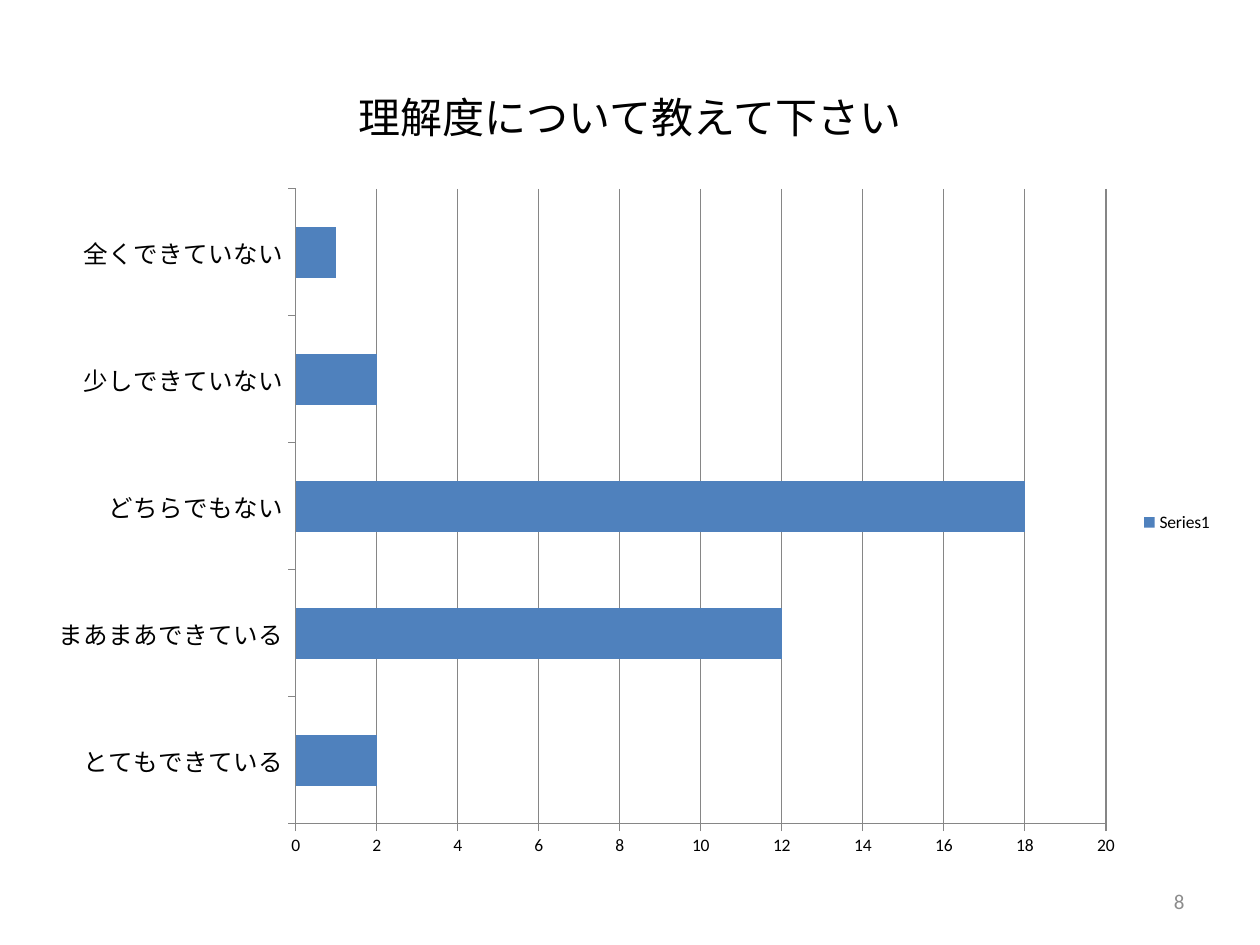
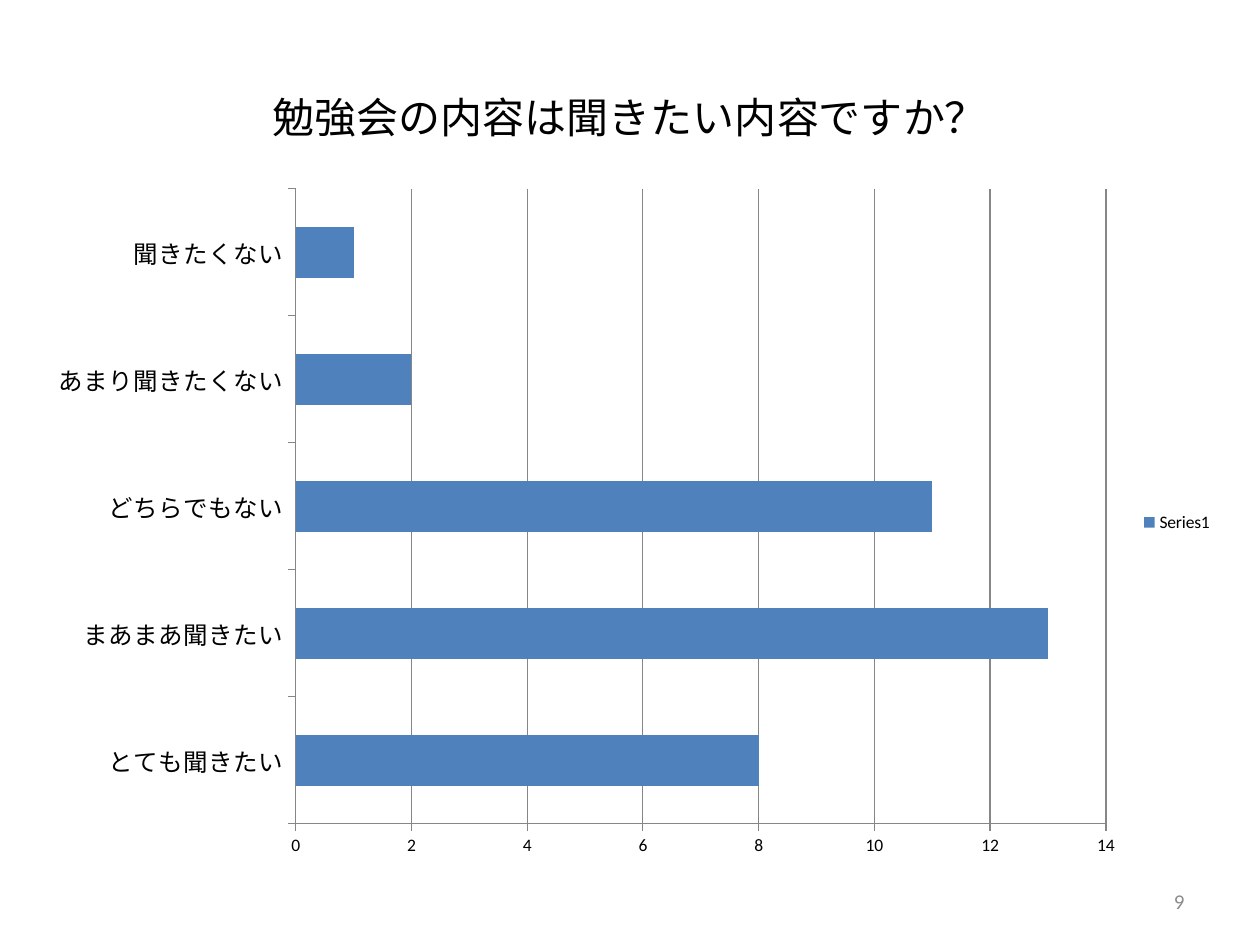
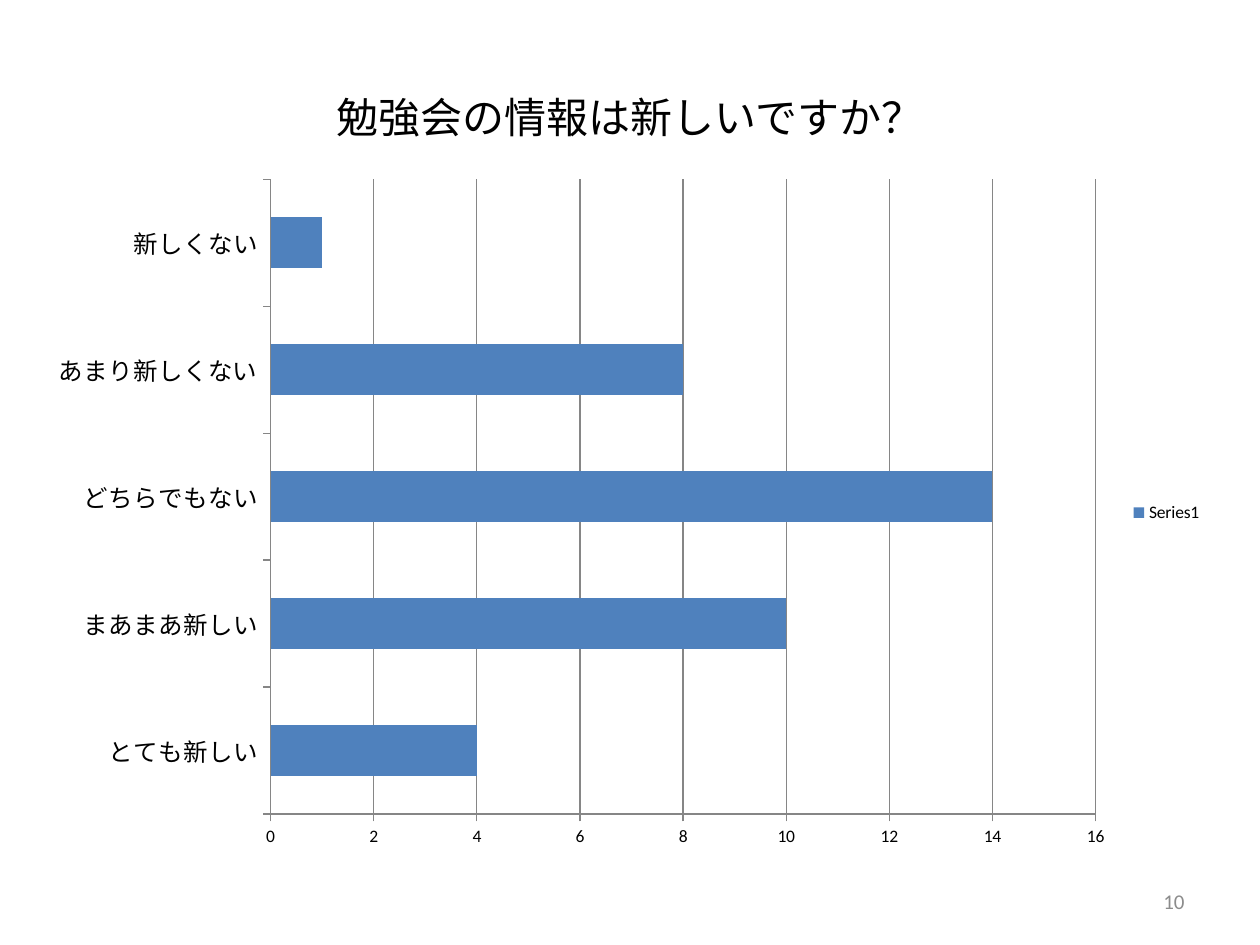
from pptx import Presentation
from pptx.chart.data import CategoryChartData
from pptx.dml.color import RGBColor
from pptx.enum.chart import XL_CHART_TYPE as ChartType, XL_LEGEND_POSITION as LegendPosition, XL_TICK_MARK as TickMark
from pptx.enum.text import MSO_ANCHOR as Anchor, PP_ALIGN as Align
from pptx.util import Pt

FONT = "Calibri"
BLACK, NUMBER_GREY, LINE_GREY, BAR_BLUE = "000000", "8C8C8C", "868686", "4F81BD"
FIRST_NUMBER = 8

QUESTIONS = [
    ("理解度について教えて下さい", (20, 100, 680.5, 397), 20,
     {"とてもできている": 2, "まあまあできている": 12, "どちらでもない": 18,
      "少しできていない": 2, "全くできていない": 1}),
    ("勉強会の内容は聞きたい内容ですか？", (20, 100, 680.5, 397), 14,
     {"とても聞きたい": 8, "まあまあ聞きたい": 13, "どちらでもない": 11,
      "あまり聞きたくない": 2, "聞きたくない": 1}),
    ("勉強会の情報は新しいですか？", (20, 94.5, 674.5, 397), 16,
     {"とても新しい": 4, "まあまあ新しい": 10, "どちらでもない": 14,
      "あまり新しくない": 8, "新しくない": 1}),
]


def color(hex_value):
    return RGBColor.from_string(hex_value)


def style_font(font, size, hex_value):
    font.name = FONT
    font.size = Pt(size)
    font.bold = False
    font.color.rgb = color(hex_value)


prs = Presentation()
prs.slide_width, prs.slide_height = Pt(720), Pt(540)
title_only = prs.slide_layouts[5]

for number, (question, chart_box, axis_top, answers) in enumerate(QUESTIONS, FIRST_NUMBER):
    slide = prs.slides.add_slide(title_only)

    page_number = slide.shapes.add_textbox(Pt(516), Pt(500.5), Pt(168), Pt(28.75))
    title = slide.shapes.title
    title.left, title.top, title.width, title.height = Pt(36), Pt(21.6), Pt(648), Pt(90)
    for box, text, align, size, hex_value in (
        (page_number, str(number), Align.RIGHT, 12, NUMBER_GREY),
        (title, question, Align.CENTER, 24, BLACK),
    ):
        frame = box.text_frame
        frame.text = text
        frame.word_wrap = True
        frame.vertical_anchor = Anchor.MIDDLE
        frame.paragraphs[0].alignment = align
        style_font(frame.paragraphs[0].runs[0].font, size, hex_value)

    votes = CategoryChartData()
    votes.categories = list(answers)
    votes.add_series("Series1", list(answers.values()))
    chart = slide.shapes.add_chart(
        ChartType.BAR_CLUSTERED, *(Pt(length) for length in chart_box), votes).chart
    chart.has_title = False
    style_font(chart.font, 10, BLACK)

    chart.has_legend = True
    chart.legend.position = LegendPosition.RIGHT
    chart.legend.include_in_layout = False
    style_font(chart.legend.font, 10, BLACK)

    plot = chart.plots[0]
    plot.gap_width = 150
    plot.vary_by_categories = False
    bars = plot.series[0].format.fill
    bars.solid()
    bars.fore_color.rgb = color(BAR_BLUE)

    answer_axis, count_axis = chart.category_axis, chart.value_axis
    count_axis.minimum_scale, count_axis.maximum_scale, count_axis.major_unit = 0, axis_top, 2
    count_axis.has_major_gridlines = True
    for axis, size in ((answer_axis, 14), (count_axis, 10)):
        axis.major_tick_mark = TickMark.OUTSIDE
        axis.minor_tick_mark = TickMark.NONE
        style_font(axis.tick_labels.font, size, BLACK)
    for ruled in (answer_axis, count_axis, count_axis.major_gridlines):
        ruled.format.line.color.rgb = color(LINE_GREY)
        ruled.format.line.width = Pt(0.75)

prs.save("out.pptx")
